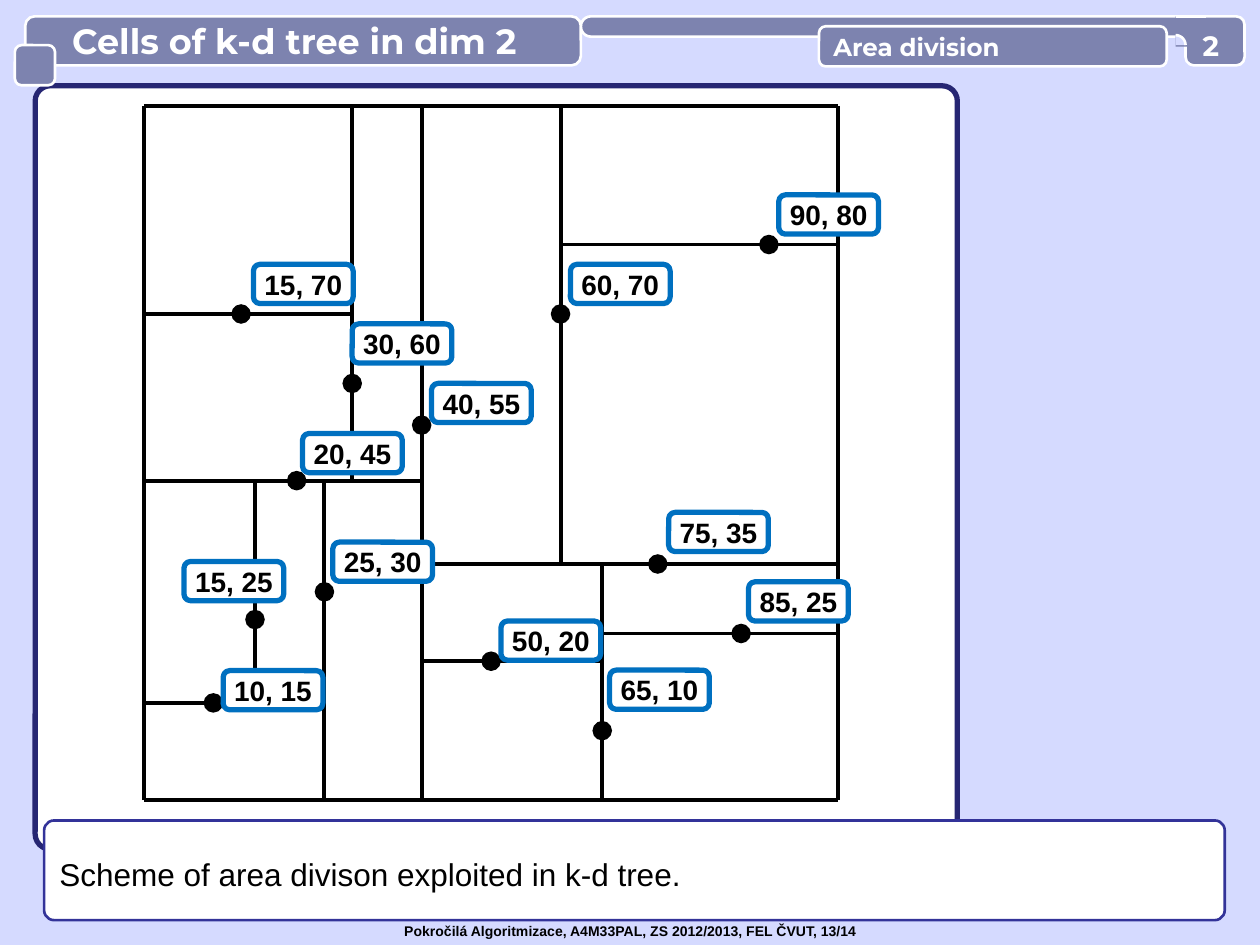
from dataclasses import dataclass
from math import cos, pi, sin

from lxml.etree import SubElement
from pptx import Presentation
from pptx.dml.color import RGBColor
from pptx.enum.shapes import MSO_CONNECTOR, MSO_SHAPE
from pptx.enum.text import MSO_ANCHOR, PP_ALIGN
from pptx.oxml.ns import qn
from pptx.util import Cm, Pt


@dataclass(frozen=True)
class Theme:
    page: str = "D5DAFF"
    bar: str = "7D83AF"
    white: str = "FFFFFF"
    black: str = "000000"
    panel_line: str = "262673"
    caption_line: str = "333399"
    label_line: str = "0070C0"
    body_font: str = "Arial"
    head_font: str = "Montserrat"
    title: int = 20
    caption: int = 18
    label: int = 16
    topic: int = 14
    footer: int = 8
    thin: float = 1.5
    split: float = 2.25
    thick: float = 3


T = Theme()

# The divided area is 100 by 100 units, with y pointing up.
LEFT, BOTTOM, UNIT = 2.9, 16.13, 0.14

# Split lines: x1, y1, x2, y2
SPLITS = [
    (16, 14, 16, 46), (60, 34, 60, 100), (66, 0, 66, 34), (30, 46, 30, 100),
    (26, 0, 26, 46), (40, 34, 100, 34), (0, 46, 40, 46), (40, 0, 40, 100),
    (60, 80, 100, 80), (66, 24, 100, 24), (40, 20, 66, 20), (0, 70, 30, 70),
    (0, 14, 26, 14),
]
BORDER = [(0, 0, 0, 100), (100, 0, 100, 100), (0, 0, 100, 0), (0, 100, 100, 100)]

# Nodes: label, x, y, split direction, label offset from the dot in cm
NODES = [
    ("60, 70", 60, 70, "v", 0.2, -1),
    ("85, 25", 86, 24, "h", 0.15, -1.04),
    ("75, 35", 74, 34, "h", 0.22, -1.04),
    ("65, 10", 66, 10, "v", 0.15, -1.22),
    ("50, 20", 50, 20, "h", 0.2, -0.81),
    ("40, 55", 40, 54, "v", 0.2, -0.84),
    ("30, 60", 30, 60, "v", 0, -1.2),
    ("15, 70", 14, 70, "h", 0.25, -1),
    ("20, 45", 22, 46, "h", 0.12, -0.95),
    ("25, 30", 26, 30, "v", 0.17, -1),
    ("15, 25", 16, 26, "v", -1.43, -1.17),
    ("10, 15", 10, 14, "h", 0.2, -0.65),
    ("90, 80", 90, 80, "h", 0.2, -1),
]


def rgb(color):
    return RGBColor.from_string(color)


def to_cm(x, y):
    return LEFT + x * UNIT, BOTTOM - y * UNIT


def paint(s, fill=None, line=None, width=T.thin):
    s.shadow.inherit = False
    if fill:
        s.fill.solid()
        s.fill.fore_color.rgb = rgb(fill)
    else:
        s.fill.background()
    if line:
        s.line.color.rgb = rgb(line)
        s.line.width = Pt(width)
    else:
        s.line.fill.background()


def add_box(slide, x, y, w, h, fill, line=None, width=T.thin, radius=None):
    """Add a rounded box, or a square one for radius 0."""
    kind = MSO_SHAPE.RECTANGLE if radius == 0 else MSO_SHAPE.ROUNDED_RECTANGLE
    s = slide.shapes.add_shape(kind, Cm(x), Cm(y), Cm(w), Cm(h))
    if radius:
        s.adjustments[0] = radius
    paint(s, fill, line, width)
    return s


def set_text(s, text, size, font, color, bold=True, align=PP_ALIGN.LEFT,
             inset=None, wrap=True, spacing=None):
    tf = s.text_frame
    tf.text = text
    tf.word_wrap = wrap
    tf.vertical_anchor = MSO_ANCHOR.MIDDLE
    if inset is not None:
        tf.margin_left = Cm(inset)
        tf.margin_right = tf.margin_top = tf.margin_bottom = 0
    p = tf.paragraphs[0]
    p.alignment = align
    if spacing:
        p.line_spacing = spacing
    f = p.runs[0].font
    f.size, f.name, f.bold = Pt(size), font, bold
    f.color.rgb = rgb(color)


def add_line(slide, start, end, color=T.black, width=T.split, dot=False):
    """Draw a line in cm, with an optional dot at its end."""
    s = slide.shapes.add_connector(MSO_CONNECTOR.STRAIGHT,
                                   *(Cm(v) for v in (*start, *end)))
    s.line.color.rgb = rgb(color)
    s.line.width = Pt(width)
    if dot:
        SubElement(s.line._get_or_add_ln(), qn("a:tailEnd"),
                   type="oval", w="lg", len="lg")
    SubElement(s._element.spPr, qn("a:effectLst"))


def add_outline(slide, points, close, fill=None, line=None):
    (x, y), *rest = [(Cm(px), Cm(py)) for px, py in points]
    builder = slide.shapes.build_freeform(x, y)
    builder.add_line_segments(rest, close=close)
    paint(builder.convert_to_shape(), fill, line)


def add_area(slide):
    for x1, y1, x2, y2 in SPLITS:
        add_line(slide, to_cm(x1, y1), to_cm(x2, y2))
    for _, x, y, direction, _, _ in NODES:
        start = (x, y - 2) if direction == "v" else (x + 2, y)
        add_line(slide, to_cm(*start), to_cm(x, y), dot=True)
    for x1, y1, x2, y2 in BORDER:
        add_line(slide, to_cm(x1, y1), to_cm(x2, y2))


def add_labels(slide):
    for text, x, y, _, dx, dy in NODES:
        cx, cy = to_cm(x, y)
        s = add_box(slide, cx + dx, cy + dy, 2.01, 0.79,
                    T.white, T.label_line, T.thick)
        set_text(s, text, T.label, T.body_font, T.black,
                 align=PP_ALIGN.CENTER, inset=0)


def add_bar_joint(slide, x):
    """Square off a corner where the thin bar meets a tab."""
    add_box(slide, x, 0.33, 0.61, 0.61, T.bar, radius=0)
    add_line(slide, (x, 0.33), (x + 0.61, 0.33), T.white, T.thin)


def add_header(slide):
    add_box(slide, 11.71, 0.33, 12.4, 0.41, T.bar, T.white, radius=0.5)
    add_bar_joint(slide, 10.69)
    add_box(slide, 23.9, 0.33, 1.19, 0.99, T.bar, T.white, radius=0.17)
    add_bar_joint(slide, 23.7)
    cx, cy, radius, steps = 23.7, 0.91, 0.2, 8
    angles = [pi / 2 * i / steps for i in range(steps + 1)]
    arc = [(cx + radius * sin(a), cy - radius * cos(a)) for a in angles]
    add_outline(slide, arc + [(cx, cy)], True, fill=T.page)
    add_outline(slide, arc, False, line=T.white)

    topic = add_box(slide, 16.51, 0.53, 7.01, 0.81, T.bar, T.white, radius=0.17)
    set_text(topic, "Area division", T.topic, T.head_font, T.white)
    number = slide.shapes.add_textbox(Cm(23.9), Cm(0.56), Cm(1.02), Cm(0.69))
    set_text(number, "2", T.label, T.head_font, T.white,
             align=PP_ALIGN.CENTER, inset=0)


def add_title(slide):
    title = add_box(slide, 0.51, 0.33, 11.2, 0.99, T.bar, T.white, radius=0.19)
    set_text(title, "Cells of k-d tree in dim 2", T.title, T.head_font,
             T.white, inset=0.89)
    add_box(slide, 0.3, 0.91, 0.81, 0.81, T.bar, T.white, radius=0.17)


def main():
    prs = Presentation()
    prs.slide_width, prs.slide_height = Cm(25.4), Cm(19.05)
    slide = prs.slides.add_slide(prs.slide_layouts[6])
    slide.background.fill.solid()
    slide.background.fill.fore_color.rgb = rgb(T.page)

    add_box(slide, 0.71, 1.73, 18.59, 15.39, T.white, T.panel_line, T.thick, 0.02)
    add_area(slide)
    caption = add_box(slide, 0.89, 16.54, 23.8, 2.01, T.white, T.caption_line,
                      radius=0.1)
    set_text(caption, "Scheme of area divison exploited in k-d tree.",
             T.caption, T.body_font, T.black, bold=False, spacing=1.2)
    add_labels(slide)
    add_header(slide)
    footer = slide.shapes.add_textbox(Cm(7.9), Cm(18.47), Cm(9.91), Cm(0.61))
    set_text(footer, "Pokročilá Algoritmizace, A4M33PAL, ZS 2012/2013, FEL ČVUT, 13/14",
             T.footer, T.body_font, T.black, wrap=False)
    add_title(slide)
    prs.save("out.pptx")


if __name__ == "__main__":
    main()
